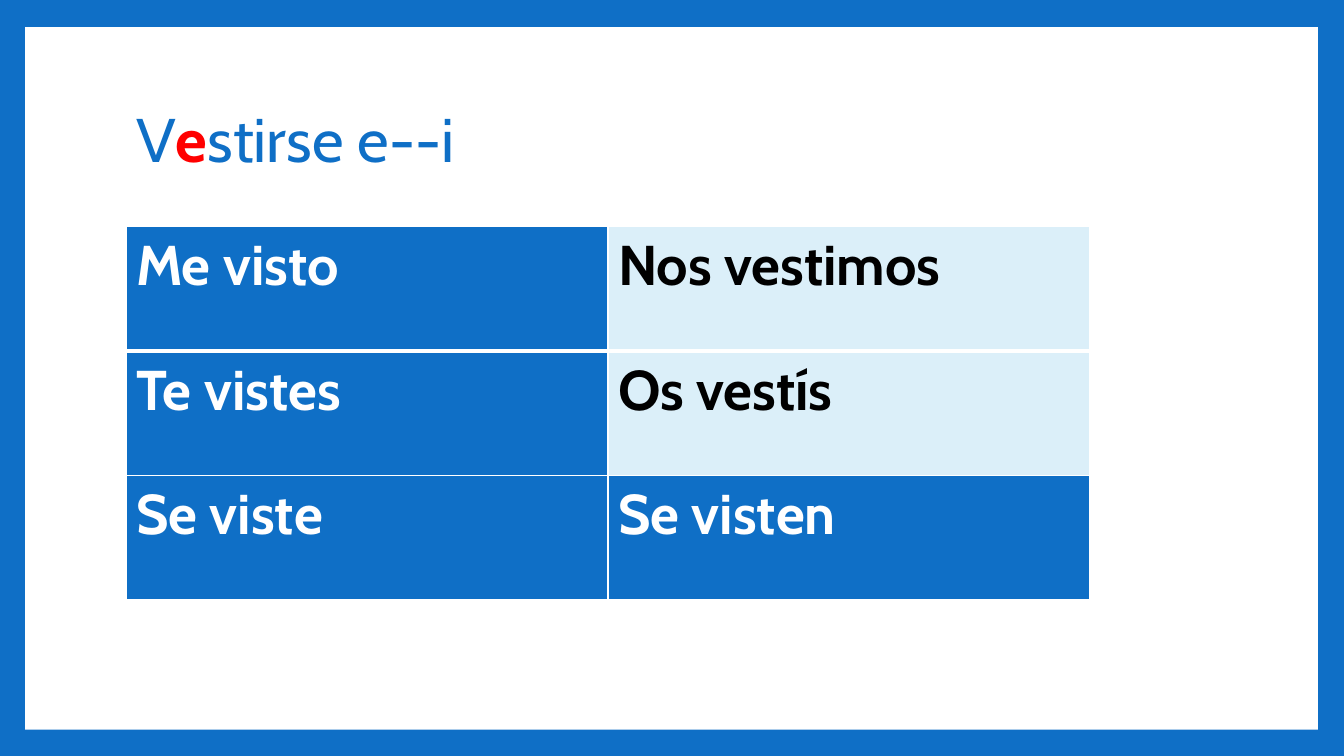
from lxml import etree
from pptx import Presentation
from pptx import util as u
from pptx.dml.color import RGBColor
from pptx.enum import shapes, text
from pptx.oxml import ns

BLUE = RGBColor(0x0F, 0x6F, 0xC6)
PALE = RGBColor(0xDB, 0xEF, 0xF9)
WHITE = RGBColor(0xFF, 0xFF, 0xFF)
BLACK = RGBColor(0, 0, 0)
RED = RGBColor(0xFF, 0, 0)


class Deck:
    font = "Cabin"

    def __init__(self):
        self.prs = Presentation()
        self.prs.slide_width = u.Inches(13.33)
        self.prs.slide_height = u.Inches(7.5)
        self.slide = self.prs.slides.add_slide(self.prs.slide_layouts[5])

    def ground(self, color):
        fill = self.slide.background.fill
        fill.solid()
        fill.fore_color.rgb = color

    def panel(self, box, color):
        rect = self.slide.shapes.add_shape(
            shapes.MSO_SHAPE.RECTANGLE, *map(u.Inches, box))
        rect.shadow.inherit = False
        rect.fill.solid()
        rect.fill.fore_color.rgb = color
        rect.line.fill.background()
        tree = rect._element.getparent()
        tree.insert(2, rect._element)

    def run(self, para, words, size, color, bold):
        run = para.add_run()
        run.text = words
        run.font.name = self.font
        run.font.size = u.Pt(size)
        run.font.bold = bold
        run.font.color.rgb = color

    def title(self, box, parts, size):
        head = self.slide.shapes.title
        head.left, head.top, head.width, head.height = map(u.Inches, box)
        frame = head.text_frame
        frame.word_wrap = True
        frame.auto_size = text.MSO_AUTO_SIZE.NONE
        frame.vertical_anchor = text.MSO_ANCHOR.MIDDLE
        para = frame.paragraphs[0]
        para.alignment = text.PP_ALIGN.LEFT
        para.line_spacing = 0.9
        for words, color, bold in parts:
            self.run(para, words, size, color, bold)

    def edge(self, cell, side, width):
        props = cell._tc.get_or_add_tcPr()
        line = etree.SubElement(props, ns.qn(f"a:ln{side}"), w=str(u.Pt(width)))
        fill = etree.SubElement(line, ns.qn("a:solidFill"))
        etree.SubElement(fill, ns.qn("a:srgbClr"), val=str(WHITE))

    def table(self, box, rows, size):
        grid = self.slide.shapes.add_table(
            len(rows), len(rows[0]), *map(u.Inches, box)).table
        for r, row in enumerate(rows):
            for c, (words, back, ink) in enumerate(row):
                cell = grid.cell(r, c)
                for side in "LRTB":
                    thick = (r, side) in ((0, "B"), (1, "T"))
                    self.edge(cell, side, 3 if thick else 1)
                cell.fill.solid()
                cell.fill.fore_color.rgb = back
                para = cell.text_frame.paragraphs[0]
                self.run(para, words, size, ink, True)


def main():
    deck = Deck()
    deck.ground(BLUE)
    deck.panel((0.25, 0.27, 12.82, 6.97), WHITE)
    deck.title((1.25, 0.67, 10.8, 1.48), [
        ("V", BLUE, False),
        ("e", RED, True),
        ("stirse e--i", BLUE, False),
    ], 44)
    deck.table((1.25, 2.25, 9.56, 3.7), [
        [("Me visto", BLUE, WHITE), ("Nos vestimos", PALE, BLACK)],
        [("Te vistes", BLUE, WHITE), ("Os vestís", PALE, BLACK)],
        [("Se viste", BLUE, WHITE), ("Se visten", BLUE, WHITE)],
    ], 40)
    deck.prs.save("out.pptx")


if __name__ == "__main__":
    main()
